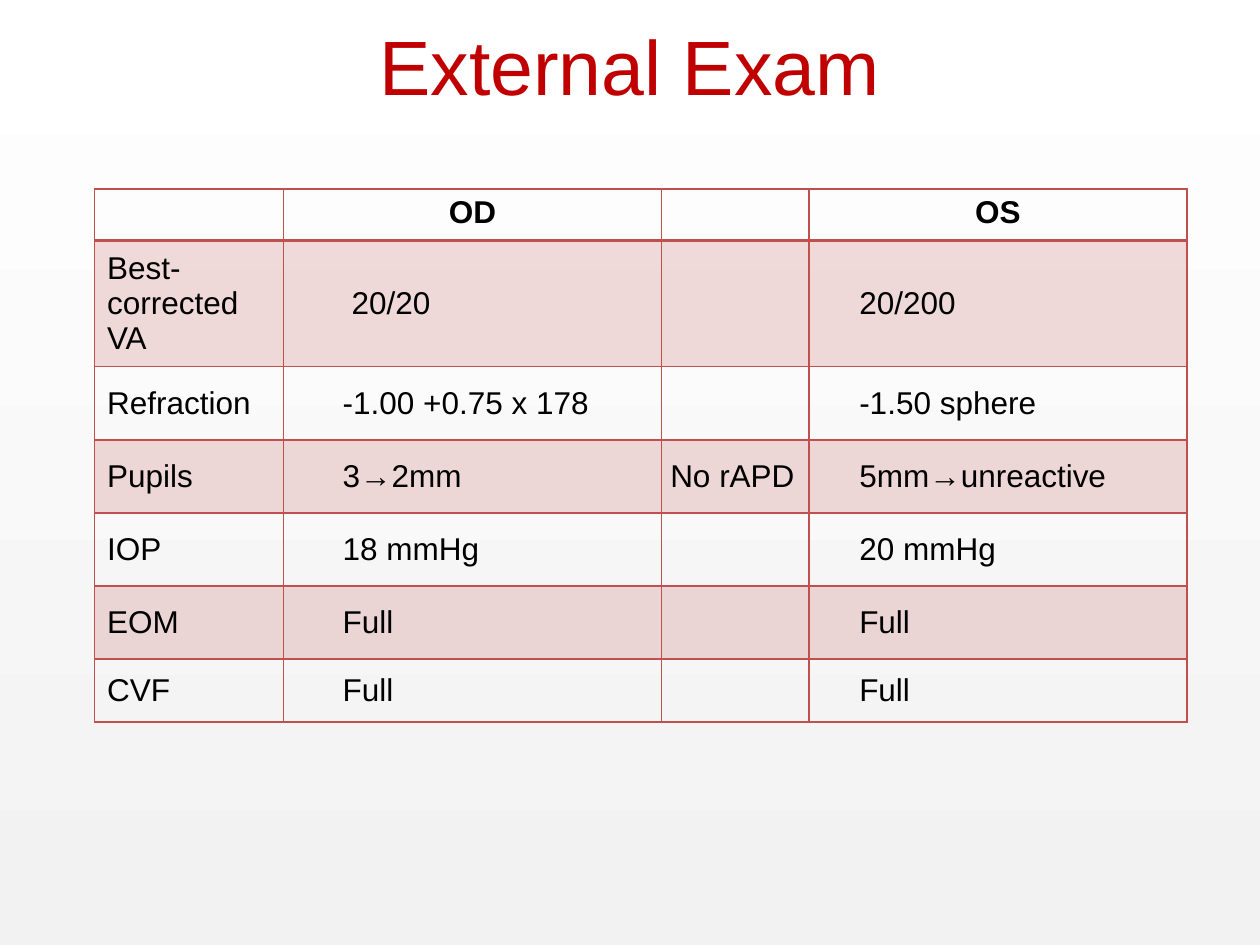
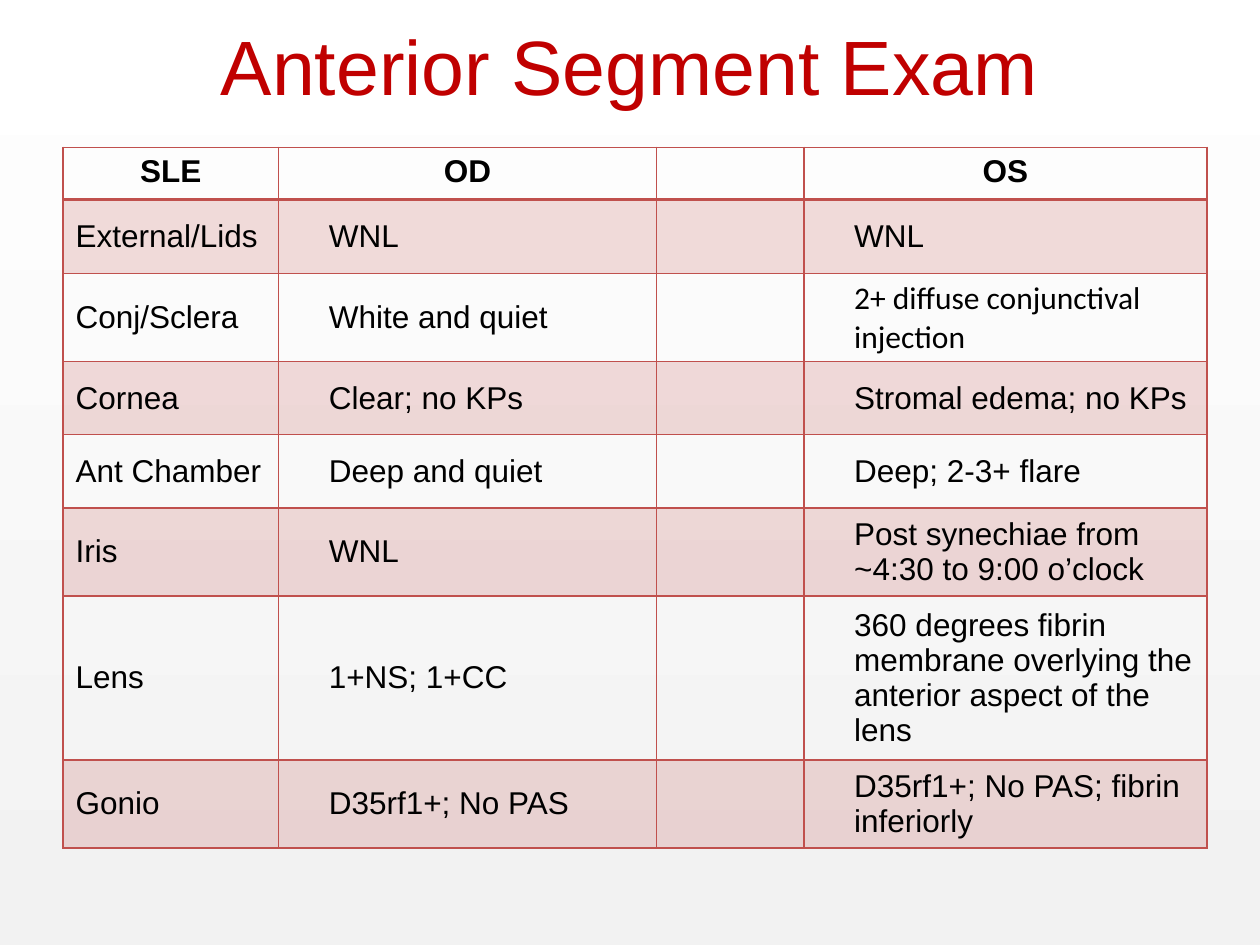
from lxml import etree
from pptx import Presentation
from pptx.dml.color import RGBColor
from pptx.enum.text import MSO_ANCHOR as Anchor, PP_ALIGN as Align
from pptx.oxml.ns import qn
from pptx.util import Inches, Pt

TITLE_RED = RGBColor(0xC0, 0x00, 0x00)
GRID_RED = RGBColor(0xC0, 0x50, 0x4D)
BLACK = RGBColor(0x00, 0x00, 0x00)
WHITE = RGBColor(0xFF, 0xFF, 0xFF)
PALE_GREY = RGBColor(0xF2, 0xF2, 0xF2)
FONT = "Arial"
LABEL_INSET, FINDING_INSET = 0.1, 0.4
SPACE = 0.07

EXTERNAL_EXAM = [
    ("", "OD", "", "OS"),
    ("Best-corrected VA", "20/20", "", "20/200"),
    ("Refraction", "-1.00 +0.75 x 178", "", "-1.50 sphere"),
    ("Pupils", "3→2mm", "No rAPD", "5mm→unreactive"),
    ("IOP", "18 mmHg", "", "20 mmHg"),
    ("EOM", "Full", "", "Full"),
    ("CVF", "Full", "", "Full"),
]
ANTERIOR_EXAM = [
    ("SLE", "OD", "", "OS"),
    ("External/Lids", "WNL", "", "WNL"),
    ("Conj/Sclera", "White and quiet", "", "2+ diffuse conjunctival injection"),
    ("Cornea", "Clear; no KPs", "", "Stromal edema; no KPs"),
    ("Ant Chamber", "Deep and quiet", "", "Deep; 2-3+ flare"),
    ("Iris", "WNL", "", "Post synechiae from ~4:30 to 9:00 o’clock"),
    ("Lens", "1+NS; 1+CC", "",
     "360 degrees fibrin membrane overlying the anterior aspect of the lens"),
    ("Gonio", "D35rf1+; No PAS", "", "D35rf1+; No PAS; fibrin inferiorly"),
]


def style_text(frame, size, color, bold=False, align=Align.LEFT):
    """Format every run of a text frame."""
    for paragraph in frame.paragraphs:
        paragraph.alignment = align
        for run in paragraph.runs:
            run.font.name = FONT
            run.font.size = Pt(size)
            run.font.bold = bold
            run.font.color.rgb = color


def add_exam_slide(prs, title):
    """Add a slide with the shared background and a centred title."""
    slide = prs.slides.add_slide(prs.slide_layouts[6])
    backdrop = slide.background.fill
    backdrop.gradient()
    backdrop.gradient_angle = 90
    for stop, color in zip(backdrop.gradient_stops, (PALE_GREY, WHITE)):
        stop.color.rgb = color
    heading = slide.shapes.add_textbox(
        Inches(0.5), Inches(-0.11), Inches(9), Inches(1.25)).text_frame
    heading.word_wrap = True
    heading.vertical_anchor = Anchor.MIDDLE
    heading.text = title
    style_text(heading, 44, TITLE_RED, align=Align.CENTER)
    return slide


def set_borders(cell, top=1, bottom=1):
    """Draw the four cell borders with widths in points."""
    properties = cell._tc.get_or_add_tcPr()
    widths = {"lnL": 1, "lnR": 1, "lnT": top, "lnB": bottom}
    for position, (side, width) in enumerate(widths.items()):
        line = etree.Element(qn(f"a:{side}"), w=str(Pt(width)))
        solid = etree.SubElement(line, qn("a:solidFill"))
        etree.SubElement(solid, qn("a:srgbClr"), val=str(GRID_RED))
        properties.insert(position, line)


def tint(cell):
    """Fill a cell with the grid red at 20 % opacity."""
    cell.fill.solid()
    cell.fill.fore_color.rgb = GRID_RED
    color = cell._tc.tcPr.find(f"{qn('a:solidFill')}/{qn('a:srgbClr')}")
    etree.SubElement(color, qn("a:alpha"), val="20000")


def add_exam_table(slide, left, top, widths, heights, findings, insets):
    """Add a banded table with a bold header row."""
    table = slide.shapes.add_table(
        len(findings), len(widths), Inches(left), Inches(top),
        Inches(sum(widths)), Inches(sum(heights))).table
    table.first_row = table.horz_banding = False
    for column, width in zip(table.columns, widths):
        column.width = Inches(width)
    for r, (height, texts) in enumerate(zip(heights, findings)):
        table.rows[r].height = Inches(height)
        is_header = r == 0
        for c, text in enumerate(texts):
            cell = table.cell(r, c)
            cell.text = text
            style_text(cell.text_frame, 18, BLACK, is_header,
                       Align.CENTER if is_header else Align.LEFT)
            if not is_header:
                cell.vertical_anchor = Anchor.MIDDLE
                cell.margin_left = Inches(insets[c])
            if r % 2:
                tint(cell)
            else:
                cell.fill.background()
            set_borders(cell, top=2 if r == 1 else 1,
                        bottom=2 if is_header else 1)
    return table


def main():
    """Build both exam slides."""
    prs = Presentation()
    prs.slide_width, prs.slide_height = Inches(10), Inches(7.5)
    body_heights = [0.59] + [0.58] * 4

    external = add_exam_slide(prs, "External Exam")
    insets = (LABEL_INSET, FINDING_INSET + SPACE, SPACE, FINDING_INSET)
    vision = add_exam_table(
        external, 0.75, 1.5, (1.5, 3, 1.17, 3),
        [0.41, *body_heights, 0.5], EXTERNAL_EXAM, insets)
    vision.cell(1, 1).margin_left = Inches(FINDING_INSET + 2 * SPACE)

    anterior = add_exam_slide(prs, "Anterior Segment Exam")
    insets = (LABEL_INSET, FINDING_INSET, LABEL_INSET, FINDING_INSET)
    segment = add_exam_table(
        anterior, 0.5, 1.17, (1.71, 3, 1.17, 3.2),
        [0.41, *body_heights, 0.5, 0.5], ANTERIOR_EXAM, insets)
    sclera_os = segment.cell(2, 3).text_frame.paragraphs[0]
    sclera_os.runs[0].font.name = "Calibri"

    prs.save("out.pptx")


if __name__ == "__main__":
    main()
